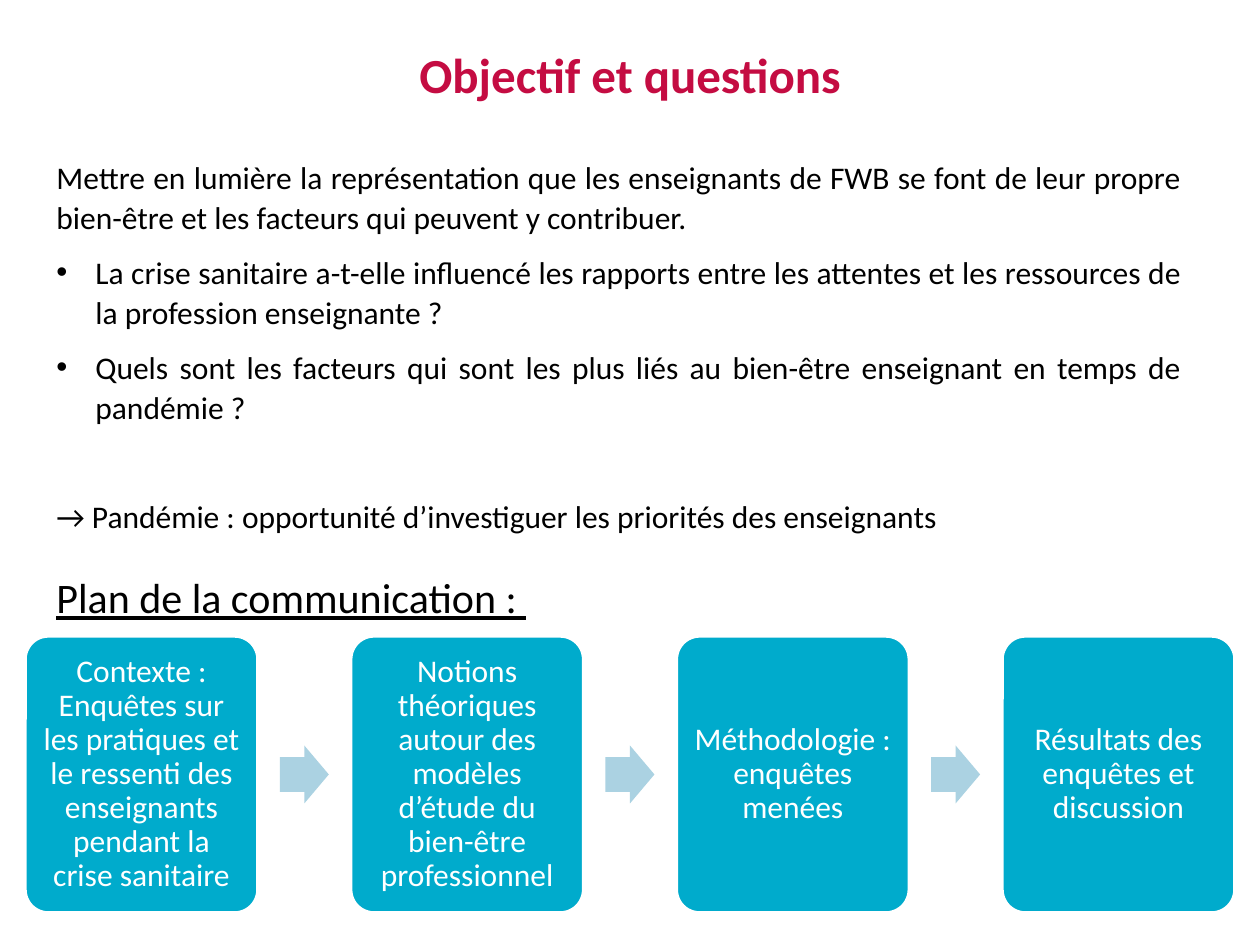
"""Build the slide of objectives, questions and plan of the talk."""
import pptx
import pptx.dml.color
import pptx.enum.shapes
import pptx.enum.text
import pptx.oxml.ns
import pptx.util
from lxml import etree

TITLE = "Objectif et questions"
BODY = [
    {"text": "Mettre en lumière la représentation que les enseignants de FWB se font "
             "de leur propre bien-être et les facteurs qui peuvent y contribuer."},
    {"text": "La crise sanitaire a-t-elle influencé les rapports entre les attentes "
             "et les ressources de la profession enseignante ?", "bullet": True},
    {"text": "Quels sont les facteurs qui sont les plus liés au bien-être enseignant "
             "en temps de pandémie ?", "bullet": True},
    {"text": "→ Pandémie : opportunité d’investiguer les priorités des enseignants",
     "before": 31},
]
PLAN_HEADING = "Plan de la communication : "
STEPS = [
    "Contexte : Enquêtes sur les pratiques et le ressenti des enseignants "
    "pendant la crise sanitaire",
    "Notions théoriques autour des modèles d’étude du bien-être professionnel",
    "Méthodologie : enquêtes menées",
    "Résultats des enquêtes et discussion",
]

RED, BLACK, WHITE, TEAL, PALE = "C40C42", "000000", "FFFFFF", "00ABCC", "ABD2E2"
FIRST_LEFT, LAST_LEFT = 25, 1002
STEP_TOP, STEP_WIDTH, STEP_HEIGHT = 636, 233, 277
ARROW_WIDTH, ARROW_HEIGHT = 49, 58
PADDING, INDENT = 16, 39
ALIGN = pptx.enum.text.PP_ALIGN
SHAPE = pptx.enum.shapes.MSO_SHAPE


def px(length):
    return round(length * 914400 / 126)


def color(value):
    return pptx.dml.color.RGBColor.from_string(value)


def style(paragraph, size, value, align, spacing=1.0, after=0, bold=False, underline=False):
    paragraph.alignment = align
    paragraph.line_spacing = spacing
    paragraph.space_after = pptx.util.Pt(after)
    for run in paragraph.runs:
        run.font.name = "Calibri"
        run.font.size = pptx.util.Pt(size)
        run.font.color.rgb = color(value)
        run.font.bold = bold
        run.font.underline = underline


def add_bullet(paragraph):
    properties = paragraph._p.get_or_add_pPr()
    properties.set("marL", str(px(INDENT)))
    properties.set("indent", str(-px(INDENT)))
    font = etree.SubElement(properties, pptx.oxml.ns.qn("a:buFont"))
    font.set("typeface", "Arial")
    bullet = etree.SubElement(properties, pptx.oxml.ns.qn("a:buChar"))
    bullet.set("char", "•")


def add_text(slide, left, top, width, height):
    box = slide.shapes.add_textbox(px(left), px(top), px(width), px(height))
    box.text_frame.word_wrap = True
    return box.text_frame


def add_shape(slide, kind, left, top, width, height, fill, adjustments):
    shape = slide.shapes.add_shape(kind, px(left), px(top), px(width), px(height))
    shape.shadow.inherit = False
    shape.fill.solid()
    shape.fill.fore_color.rgb = color(fill)
    shape.line.fill.background()
    for index, value in enumerate(adjustments):
        shape.adjustments[index] = value
    return shape


def add_step(slide, left, text):
    shape = add_shape(slide, SHAPE.ROUNDED_RECTANGLE, left, STEP_TOP,
                      STEP_WIDTH, STEP_HEIGHT, TEAL, [0.1])
    shape.line.color.rgb = color(WHITE)
    shape.line.width = pptx.util.Pt(2)
    frame = shape.text_frame
    frame.text = text
    frame.word_wrap = True
    frame.vertical_anchor = pptx.enum.text.MSO_ANCHOR.MIDDLE
    frame.margin_left = frame.margin_right = px(PADDING - 7)
    frame.margin_top = frame.margin_bottom = px(PADDING - 7)
    style(frame.paragraphs[0], 18, WHITE, ALIGN.CENTER, 0.9)


def main():
    presentation = pptx.Presentation()
    presentation.slide_width, presentation.slide_height = px(1260), px(945)
    slide = presentation.slides.add_slide(presentation.slide_layouts[6])

    title = add_text(slide, 63, 38, 1134, 157)
    title.text = TITLE
    style(title.paragraphs[0], 28, RED, ALIGN.CENTER, bold=True)

    body = add_text(slide, 44, 149, 1150, 394)
    body.text = "\n".join(item["text"] for item in BODY)
    for item, paragraph in zip(BODY, body.paragraphs):
        style(paragraph, 18, BLACK, ALIGN.JUSTIFY, 1.07, 8)
        if "before" in item:
            paragraph.space_before = pptx.util.Pt(item["before"])
        if item.get("bullet"):
            add_bullet(paragraph)

    pitch = (LAST_LEFT - FIRST_LEFT) / (len(STEPS) - 1)
    arrow_offset = (pitch + STEP_WIDTH - ARROW_WIDTH) / 2
    arrow_top = STEP_TOP + (STEP_HEIGHT - ARROW_HEIGHT) / 2
    for index, text in enumerate(STEPS):
        left = FIRST_LEFT + index * pitch
        add_step(slide, left, text)
        if index < len(STEPS) - 1:
            add_shape(slide, SHAPE.RIGHT_ARROW, left + arrow_offset, arrow_top,
                      ARROW_WIDTH, ARROW_HEIGHT, PALE, [0.6, 0.5])

    heading = add_text(slide, 44, 562, 1250, 64)
    heading.text = PLAN_HEADING
    style(heading.paragraphs[0], 24, BLACK, ALIGN.JUSTIFY, 1.07, 8, underline=True)

    presentation.save("out.pptx")


if __name__ == "__main__":
    main()
